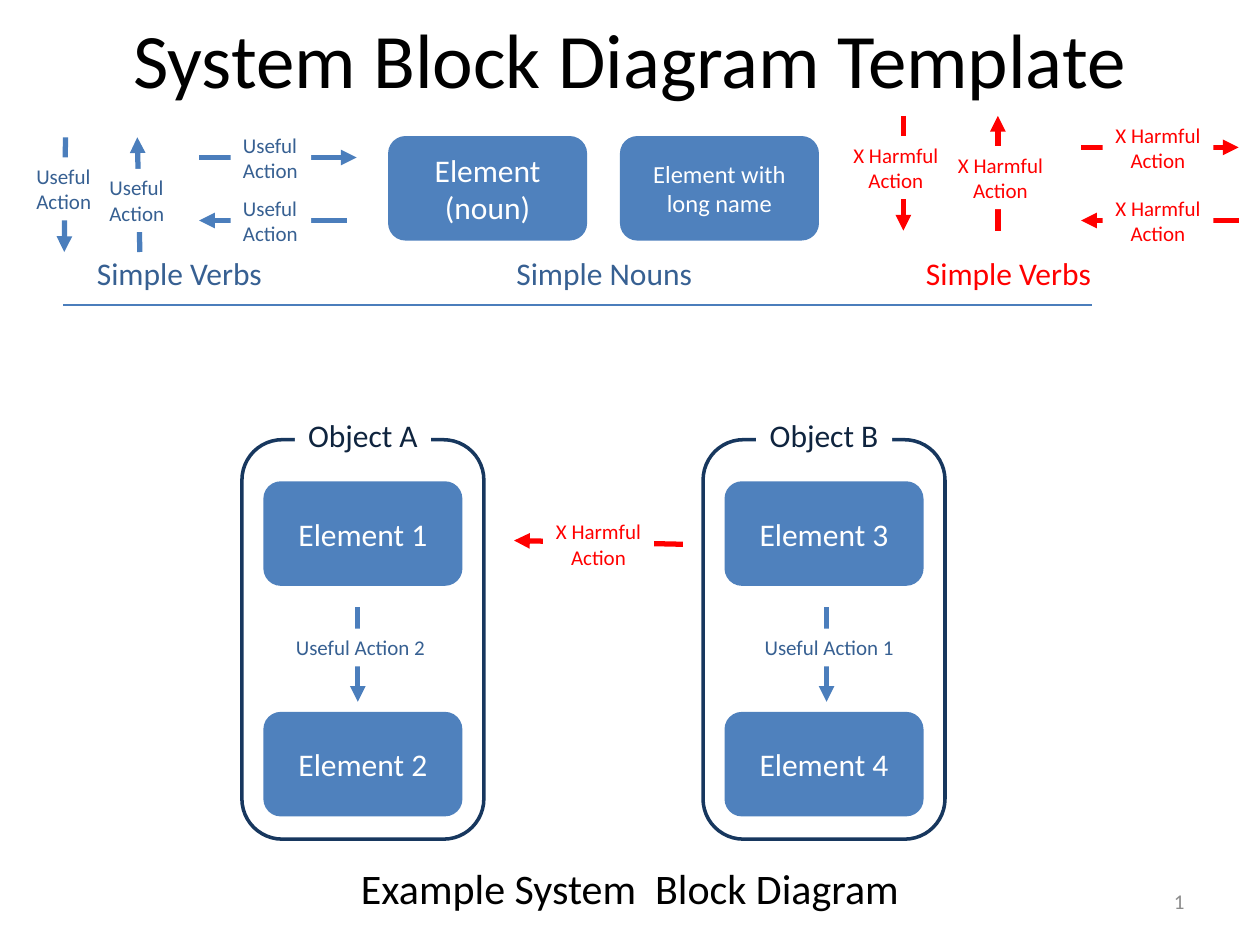
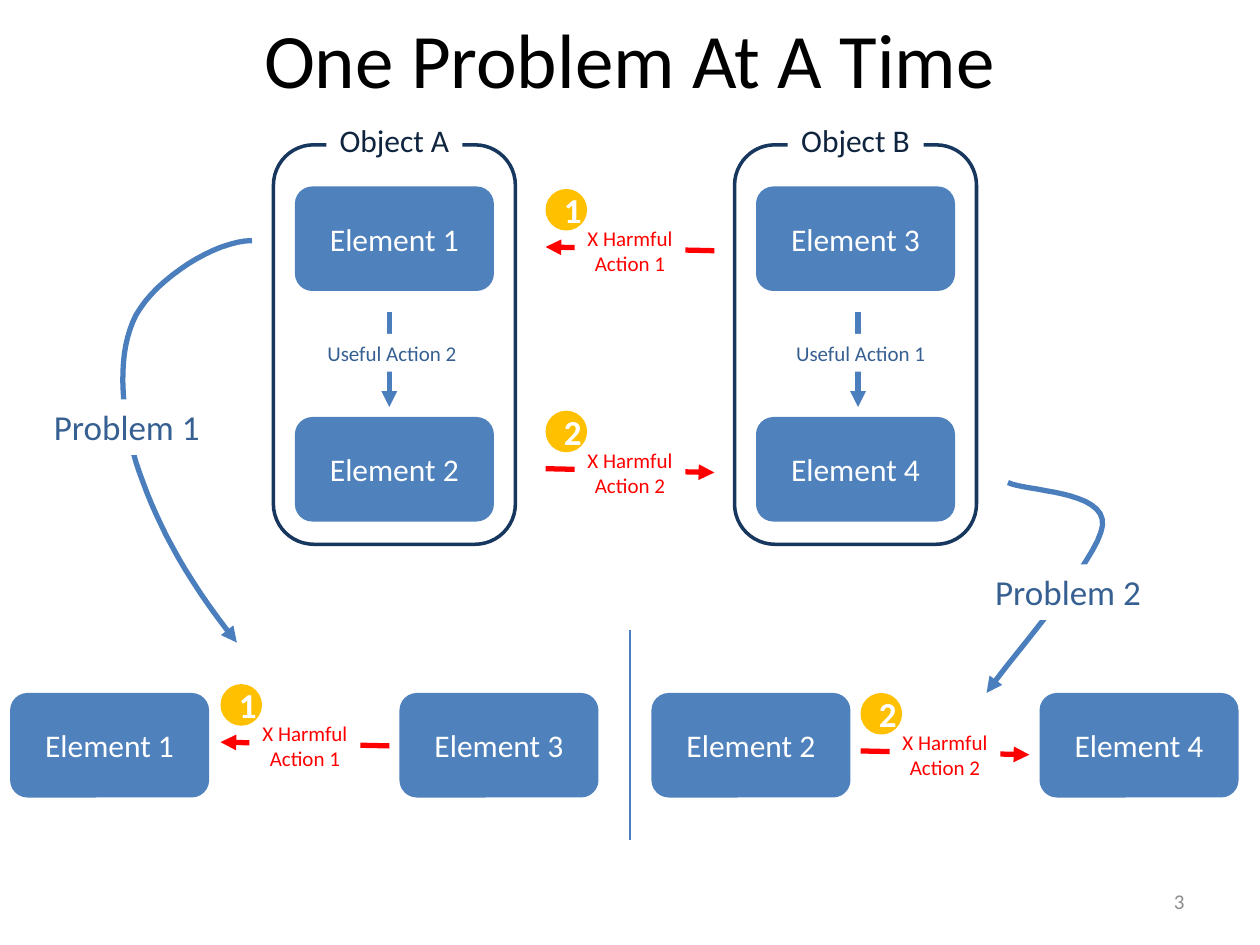
"""Builds the system block diagram template and its one-problem-at-a-time page."""
from lxml import etree
from pptx import Presentation
from pptx.dml.color import RGBColor
from pptx.enum import shapes, text
from pptx.oxml.ns import qn
from pptx.util import Inches, Pt

FONT = "Calibri"
BLACK, WHITE, GREY = "000000", "FFFFFF", "8C8C8C"
BLOCK, ARROW, VERB = "4F81BD", "4B7EBC", "376092"
HARM, FRAME, OBJECT, BADGE = "FF0000", "17375E", "0F243E", "FFC000"
LEFT, CENTER, RIGHT = text.PP_ALIGN.LEFT, text.PP_ALIGN.CENTER, text.PP_ALIGN.RIGHT
SHAPE = shapes.MSO_SHAPE
UNITS_PER_INCH = 1000

BLOCK_SIZE = (1.58, 0.83)
USEFUL_SIZE, HARM_SIZE = (0.64, 0.5), (0.88, 0.5)
USEFUL, HARMFUL = "Useful\nAction", "X Harmful\nAction"

USEFUL_VERBS = [
    ((2.75, 1.75), (1.58, 1.75), (1.83, 1.5)),
    ((1.58, 1.25), (2.83, 1.25), (1.83, 1)),
    ((0.52, 1.09), (0.51, 2), (0.19, 1.25)),
    ((1.11, 2), (1.09, 1.09), (0.77, 1.34)),
]
HARMFUL_VERBS = [
    ((8.58, 1.17), (9.83, 1.17), (8.75, 0.92)),
    ((7.17, 0.92), (7.17, 1.83), (6.67, 1.08)),
    ((7.92, 1.83), (7.92, 0.92), (7.5, 1.16)),
    ((9.83, 1.75), (8.58, 1.75), (8.75, 1.5)),
]
NOUNS = [("Element (noun)", 3.08, 18), ("Element with long name", 4.92, 14)]
LEGENDS = [
    ("Simple Verbs", 0.67, 1.58, VERB),
    ("Simple Verbs", 7.25, 1.58, HARM),
    ("Simple Nouns", 4, 1.83, VERB),
]
OBJECTS = [
    ("Object A", ("Element 1", "Element 2"), "Useful Action 2", 0.92),
    ("Object B", ("Element 3", "Element 4"), "Useful Action 1", 0.98),
]
OBJECT_STEP = 3.66
PAIRS = [("Element 1", 0.08), ("Element 3", 3.17), ("Element 2", 5.17), ("Element 4", 8.25)]
NUMBERED_HARMS = [
    (4.33, 1.96, 1, False),
    (4.33, 3.72, 2, True),
    (1.75, 5.89, 1, False),
    (6.83, 5.96, 2, True),
]
PROBLEMS = [
    ("Problem 1", (0.33, 3.17), (2, 1.91), [
        ((1.71, 1.91), (1.24, 2.21), (1.08, 2.5)),
        ((0.93, 2.79), (0.95, 3.23), (1.08, 3.67)),
        ((1.22, 4.1), (1.44, 4.55), (1.88, 5.1))]),
    ("Problem 2", (7.8, 4.48), (8, 3.83), [
        ((8.13, 3.9), (8.78, 3.89), (8.75, 4.17)),
        ((8.72, 4.44), (8.02, 5.22), (7.83, 5.5))]),
]


def color(value):
    return RGBColor.from_string(value)


def write(box, words, size, ink, align=CENTER, bold=False):
    frame = box.text_frame
    frame.text = words
    frame.vertical_anchor = text.MSO_ANCHOR.MIDDLE
    frame.word_wrap = True
    for para in frame.paragraphs:
        para.alignment = align
        font = para.font
        font.name, font.size, font.bold = FONT, Pt(size), bold
        font.color.rgb = color(ink)


def add_text(page, words, place, size, ink, align=LEFT):
    box = page.shapes.add_textbox(*map(Inches, place))
    write(box, words, size, ink, align)


def add_box(page, kind, place, fill=None, edge=None):
    box = page.shapes.add_shape(kind, *map(Inches, place))
    box.shadow.inherit = False
    if fill:
        box.fill.solid()
        box.fill.fore_color.rgb = color(fill)
    else:
        box.fill.background()
    if edge:
        box.line.color.rgb = color(edge)
        box.line.width = Pt(2)
    else:
        box.line.fill.background()
    return box


def add_block(page, words, left, top, size=18):
    box = add_box(page, SHAPE.ROUNDED_RECTANGLE, (left, top, *BLOCK_SIZE), BLOCK)
    write(box, words, size, WHITE)


def add_label(page, words, corner, extent, size, ink, align=CENTER):
    box = add_box(page, SHAPE.RECTANGLE, (*corner, *extent), WHITE)
    write(box, words, size, ink, align)
    box.text_frame.vertical_anchor = text.MSO_ANCHOR.TOP
    box.text_frame.word_wrap = False
    box.text_frame.auto_size = text.MSO_AUTO_SIZE.SHAPE_TO_FIT_TEXT


def style_line(shape, ink, width, tip):
    shape.line.color.rgb = color(ink)
    shape.line.width = Pt(width)
    if tip:
        line = shape.element.spPr.find(qn("a:ln"))
        etree.SubElement(line, qn("a:tailEnd"), type="triangle")


def add_line(page, start, end, ink=ARROW, width=3, tip=True):
    line = page.shapes.add_connector(
        shapes.MSO_CONNECTOR.STRAIGHT, *map(Inches, (*start, *end)))
    style_line(line, ink, width, tip)
    etree.SubElement(line.element.spPr, qn("a:effectLst"))


def add_curve(page, start, segments, steps=16):
    points, here = [start], start
    for first, second, end in segments:
        for step in range(1, steps + 1):
            t = step / steps
            weights = ((1 - t) ** 3, 3 * t * (1 - t) ** 2, 3 * t * t * (1 - t), t ** 3)
            points.append(tuple(
                sum(w * v for w, v in zip(weights, axis))
                for axis in zip(here, first, second, end)))
        here = end
    points = [(round(x * UNITS_PER_INCH), round(y * UNITS_PER_INCH)) for x, y in points]
    builder = page.shapes.build_freeform(*points[0], scale=Inches(1) / UNITS_PER_INCH)
    builder.add_line_segments(points[1:], close=False)
    curve = builder.convert_to_shape()
    curve.shadow.inherit = False
    curve.fill.background()
    style_line(curve, ARROW, 3, True)


def add_harm(page, left, top, words, rightward=False):
    ends = [(left, top), (left + 1.34, top + 0.03)]
    start, tip = ends if rightward else reversed(ends)
    add_line(page, start, tip, HARM)
    add_label(page, words, (left + 0.23, top - 0.22), HARM_SIZE, 12, HARM)


def add_objects(page, left, top):
    for index, (name, elements, action, offset) in enumerate(OBJECTS):
        x = left + index * OBJECT_STEP
        for row, element in enumerate(elements):
            add_block(page, element, x + 0.17, top + 0.33 + row * 1.83)
        add_box(page, SHAPE.ROUNDED_RECTANGLE, (x, top, 1.92, 3.17), edge=FRAME)
        add_label(page, name, (x + 0.42, top - 0.24), (1.08, 0.4), 18, OBJECT)
        middle = x + offset
        add_line(page, (middle, top + 1.33), (middle, top + 2.08))
        add_label(page, action, (middle - 0.59, top + 1.5), (1.24, 0.3), 12, VERB, LEFT)


def add_page(deck, title, number):
    page = deck.slides.add_slide(deck.slide_layouts[5])
    box = page.shapes.title
    box.left, box.top, box.width, box.height = map(Inches, (0.5, -0.17, 9, 1.25))
    write(box, title, 44, BLACK)
    add_text(page, str(number), (7.17, 6.95, 2.33, 0.4), 12, GREY, RIGHT)
    return page


def build_template(deck):
    page = add_page(deck, "System Block Diagram Template", 1)
    for words, left, size in NOUNS:
        add_block(page, words, left, 1.08, size)
    for verbs, words, extent, line, ink, align in (
            (USEFUL_VERBS, USEFUL, USEFUL_SIZE, ARROW, VERB, LEFT),
            (HARMFUL_VERBS, HARMFUL, HARM_SIZE, HARM, HARM, CENTER)):
        for start, tip, corner in verbs:
            add_line(page, start, tip, line)
            add_label(page, words, corner, extent, 12, ink, align)
    add_harm(page, 4.08, 4.29, HARMFUL)
    add_objects(page, 1.92, 3.49)
    add_line(page, (0.5, 2.42), (8.67, 2.42), width=0.75, tip=False)
    for words, left, width, ink in LEGENDS:
        add_text(page, words, (left, 1.83, width, 0.67), 18, ink)
    add_text(page, "Example System  Block Diagram", (0.5, 6.42, 9, 1.25), 24, BLACK, CENTER)


def build_problems(deck):
    page = add_page(deck, "One Problem At A Time", 3)
    add_objects(page, 2.17, 1.15)
    for words, left in PAIRS:
        add_block(page, words, left, 5.5)
    for left, top, number, rightward in NUMBERED_HARMS:
        add_harm(page, left, top, f"{HARMFUL} {number}", rightward)
        badge = add_box(page, SHAPE.OVAL, (left, top - 0.46, 0.33, 0.33), BADGE)
        write(badge, str(number), 20, WHITE, bold=True)
    add_line(page, (5, 5), (5, 6.67), width=0.75, tip=False)
    for words, corner, start, segments in PROBLEMS:
        add_curve(page, start, segments)
        add_label(page, words, corner, (1.37, 0.44), 20, VERB, LEFT)


def main():
    deck = Presentation()
    deck.slide_width, deck.slide_height = Inches(10), Inches(7.5)
    build_template(deck)
    build_problems(deck)
    deck.save("out.pptx")


if __name__ == "__main__":
    main()
